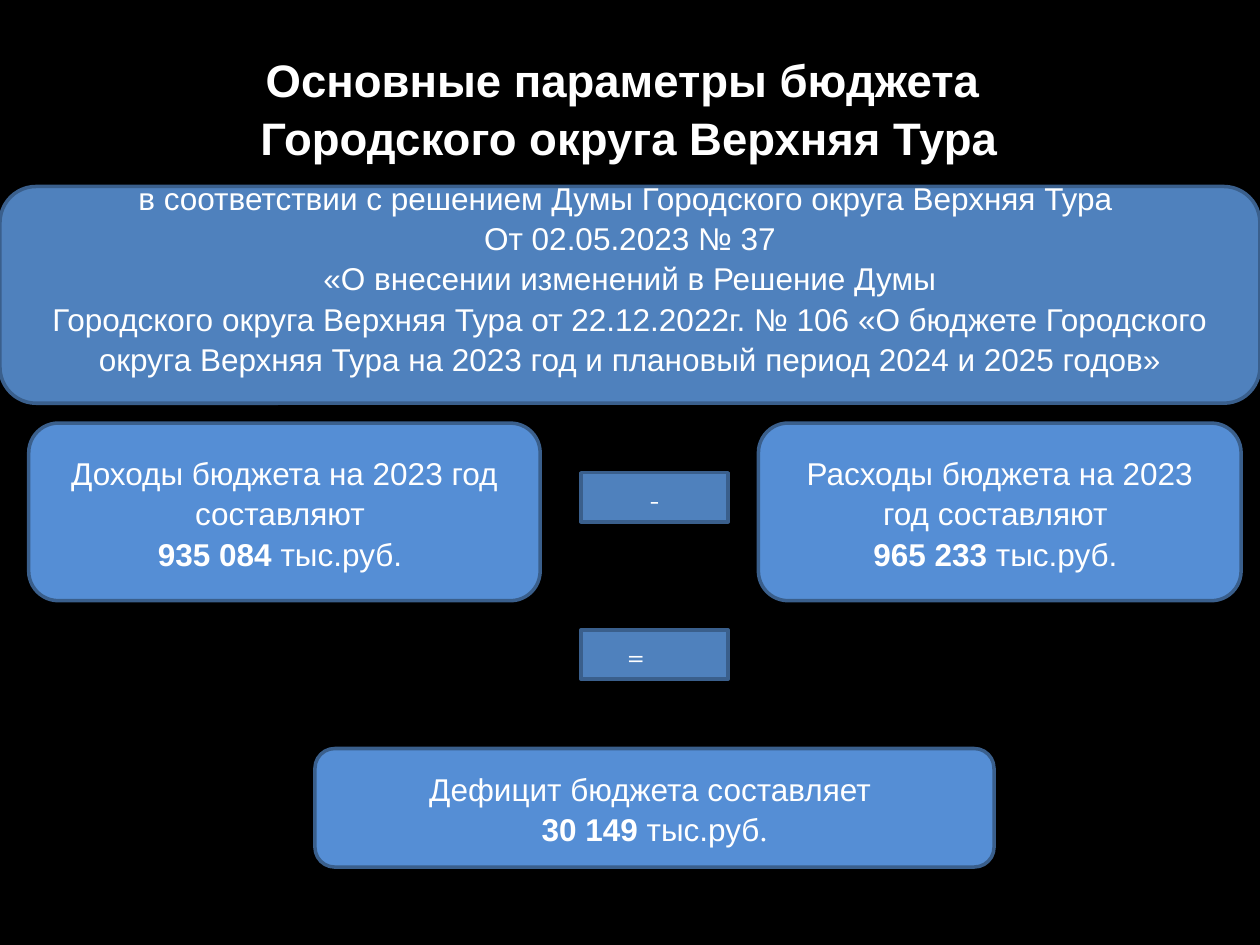
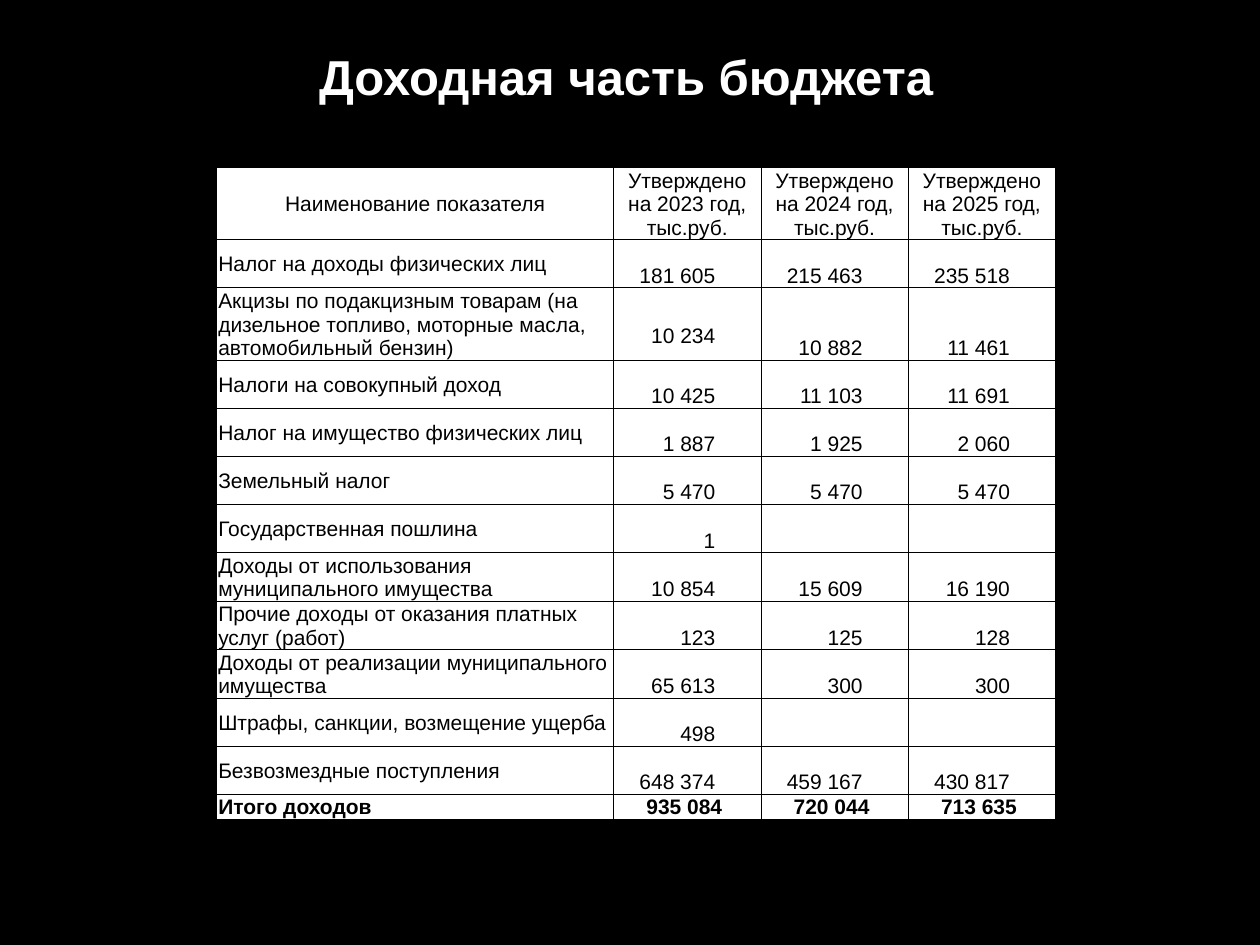
import pptx
import pptx.util
import pptx.dml.color
import pptx.enum.shapes
import pptx.enum.text
import pptx.oxml
import pptx.oxml.ns

Cm, Pt = pptx.util.Cm, pptx.util.Pt
Align = pptx.enum.text.PP_ALIGN
Anchor = pptx.enum.text.MSO_ANCHOR
Shape = pptx.enum.shapes.MSO_SHAPE

COLORS = {
    "black": "000000",
    "white": "FFFFFF",
    "band": "4F81BD",
    "box": "558ED5",
    "edge": "3A5F8C",
}

BAND = [
    "в соответствии с решением Думы Городского округа Верхняя Тура ",
    "От 02.05.2023 № 37",
    "«О внесении изменений в Решение Думы",
    "Городского округа Верхняя Тура от 22.12.2022г. № 106 «О бюджете "
    "Городского округа Верхняя Тура на 2023 год и плановый период 2024 и 2025 годов»",
]

HEAD = ["Наименование показателя"] + [
    f"Утверждено на {year} год, тыс.руб." for year in (2023, 2024, 2025)
]
INCOME = [
    ("Налог на доходы физических лиц", "181 605", "215 463", "235 518"),
    ("Акцизы по подакцизным товарам (на дизельное топливо, моторные масла, "
     "автомобильный бензин)", "10 234", "10 882", "11 461"),
    ("Налоги на совокупный доход", "10 425", "11 103", "11 691"),
    ("Налог на имущество физических лиц", "1 887", "1 925", "2 060"),
    ("Земельный налог", "5 470", "5 470", "5 470"),
    ("Государственная пошлина", "1", "", ""),
    ("Доходы от использования муниципального имущества", "10 854", "15 609", "16 190"),
    ("Прочие доходы от оказания платных услуг (работ)", "123", "125", "128"),
    ("Доходы от реализации муниципального имущества", "65 613", "300", "300"),
    ("Штрафы, санкции, возмещение ущерба", "498", "", ""),
    ("Безвозмездные поступления", "648 374", "459 167", "430 817"),
]
TOTAL = ("Итого доходов", "935 084", "720 044", "713 635")


def paint(fill, name):
    fill.solid()
    fill.fore_color.rgb = color(name)


def color(name):
    return pptx.dml.color.RGBColor.from_string(COLORS[name])


class Deck:
    """Holds the shared style and the slide being filled."""

    font = "Arial"
    lead = 1.07

    def __init__(self):
        self.prs = pptx.Presentation()
        self.prs.slide_width, self.prs.slide_height = Cm(25.4), Cm(19.05)
        paint(self.prs.slide_master.background.fill, "black")
        self.slide = None

    def run(self, para, text, size, tint="white", bold=False, font=None):
        run = para.add_run()
        run.text = text
        run.font.size = Pt(size)
        run.font.name = font or self.font
        run.font.bold = bold
        run.font.color.rgb = color(tint)

    def title(self, lines, size, area):
        """Start a slide and set its title."""
        self.slide = self.prs.slides.add_slide(self.prs.slide_layouts[5])
        head = self.slide.shapes.title
        head.left, head.top, head.width, head.height = map(Cm, area)
        frame = head.text_frame
        frame.auto_size = pptx.enum.text.MSO_AUTO_SIZE.NONE
        frame.vertical_anchor = Anchor.MIDDLE
        para = frame.paragraphs[0]
        para.alignment = Align.CENTER
        para.line_spacing = self.lead
        for i, line in enumerate(lines):
            if i:
                para.add_line_break()
            self.run(para, line, size, bold=True)

    def box(self, area, paras, fill="box", kind=Shape.ROUNDED_RECTANGLE):
        """Add a filled shape; each paragraph is a list of (text, run style)."""
        box = self.slide.shapes.add_shape(kind, *map(Cm, area))
        box.shadow.inherit = False
        paint(box.fill, fill)
        box.line.color.rgb = color("edge")
        box.line.width = Pt(2)
        frame = box.text_frame
        frame.word_wrap = True
        frame.vertical_anchor = Anchor.MIDDLE
        for i, runs in enumerate(paras):
            para = frame.add_paragraph() if i else frame.paragraphs[0]
            para.alignment = Align.CENTER
            para.line_spacing = self.lead
            for text, style in runs:
                self.run(para, text, 18, **style)
        return frame

    def sign(self, top, text):
        return self.box((11.71, top, 2.97, 0.99), [[(text, {"font": "Cambria"})]],
                        "band", Shape.RECTANGLE)

    def cell(self, cell, text, align, anchor, bold=False, right=0.03, bottom=0):
        paint(cell.fill, "white")
        cell.margin_left = cell.margin_top = Cm(0.03)
        cell.margin_right, cell.margin_bottom = Cm(right), Cm(bottom)
        cell.vertical_anchor = anchor
        para = cell.text_frame.paragraphs[0]
        para.alignment = align
        if text:
            self.run(para, text, 12, "black", bold)
        else:
            para.font.size = Pt(12)
        self.edge(cell)

    def edge(self, cell):
        """Draw thin black borders; they must precede the cell fill."""
        props = cell._tc.get_or_add_tcPr()
        for i, side in enumerate("LRTB"):
            props.insert(i, pptx.oxml.parse_xml(
                f'<a:ln{side} {pptx.oxml.ns.nsdecls("a")} w="{Pt(0.5)}"><a:solidFill>'
                f'<a:srgbClr val="{COLORS["black"]}"/></a:solidFill></a:ln{side}>'))

    def table(self, left, top, widths, heights):
        frame = self.slide.shapes.add_table(
            len(heights), len(widths), Cm(left), Cm(top), Cm(sum(widths)), Cm(sum(heights)))
        table = frame.table
        table.first_row = table.horz_banding = False
        for col, width in zip(table.columns, widths):
            col.width = Cm(width)
        for row, height in zip(table.rows, heights):
            row.height = Cm(height)
        return table


def budget(deck):
    deck.title(["Основные параметры бюджета ", "Городского округа Верхняя Тура"],
               26, (0.58, 0.74, 24.21, 2.82))
    bold = {"bold": True}
    sums = [
        ((0.58, 8.53, 10.31, 3.58), "Доходы бюджета на 2023 год составляют ", "935 084 "),
        ((15.29, 8.53, 9.73, 3.58), "Расходы бюджета на 2023 год составляют ", "965 233 "),
    ]
    for area, label, value in sums:
        deck.box(area, [[(label, {})], [(value, bold), ("тыс.руб. ", {})]])
    deck.box((6.35, 15.09, 13.69, 2.39), [
        [("Дефицит бюджета составляет ", {})],
        [("30 149 ", bold), ("тыс.руб", {}), (".", {"font": "Times New Roman"})],
    ])
    deck.sign(9.53, "-")
    deck.sign(12.7, "=").margin_right = Cm(1)
    band = deck.box((0, 3.76, 25.4, 4.37), [[(line, {})] for line in BAND], "band")
    band.margin_top, band.margin_bottom = 0, Cm(0.72)


def income(deck):
    deck.title(["Доходная часть бюджета"], 28, (1.19, 0.58, 22.86, 1.83))
    heights = [1.42, 0.97, 1.45] + [0.97] * 9 + [0.49]
    table = deck.table(4.37, 3.38, [8] + [2.97] * 3, heights)
    for c, text in enumerate(HEAD):
        deck.cell(table.cell(0, c), text, Align.CENTER, Anchor.MIDDLE)
    for r, (label, *values) in enumerate(INCOME, 1):
        deck.cell(table.cell(r, 0), label, Align.LEFT, Anchor.MIDDLE)
        for c, value in enumerate(values, 1):
            lift = 0.24 if (r, c) == (2, 1) else 0
            deck.cell(table.cell(r, c), value, Align.RIGHT, Anchor.BOTTOM,
                      right=0.92, bottom=lift)
    last = len(heights) - 1
    for c, text in enumerate(TOTAL):
        align, right = (Align.CENTER, 0.15) if c else (Align.JUSTIFY, 0.03)
        deck.cell(table.cell(last, c), text, align, Anchor.TOP, True, right)


def main():
    deck = Deck()
    budget(deck)
    income(deck)
    deck.prs.save("out.pptx")


if __name__ == "__main__":
    main()
